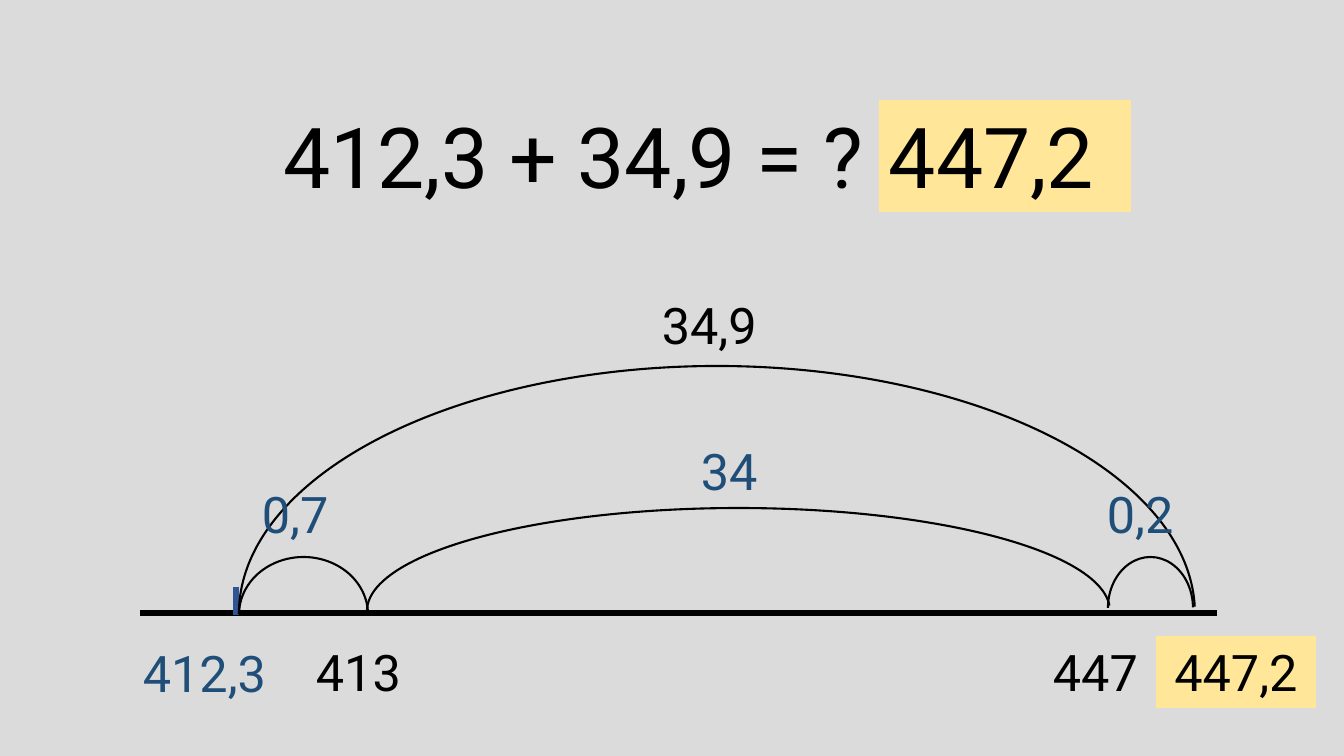
from pptx import Presentation
from pptx.dml.color import RGBColor
from pptx.enum.shapes import MSO_CONNECTOR, MSO_SHAPE
from pptx.enum.text import MSO_ANCHOR, MSO_AUTO_SIZE, PP_ALIGN
from pptx.oxml.ns import qn
from pptx.util import Pt
from lxml import etree

ARC, RECT = MSO_SHAPE.ARC, MSO_SHAPE.RECTANGLE
LEFT, CENTER = PP_ALIGN.LEFT, PP_ALIGN.CENTER
TOP = MSO_ANCHOR.TOP
GROW = MSO_AUTO_SIZE.SHAPE_TO_FIT_TEXT
STRAIGHT = MSO_CONNECTOR.STRAIGHT

# Content: lengths in px
WIDE, HIGH = 1344, 756
FONT = "Roboto"
BACK, BLACK, BLUE, TICK, GOLD = "DBDBDB", "000000", "1F4E79", "2F5597", "FFE699"
BIG, SMALL = 60, 36
LABEL_H = 72

TITLE = ("412,3 + 34,9 = ?", (273, 99, 676, 112))
# text, box, size, alignment
ANSWERS = [
    ("447,2", (879, 100, 252, 112), BIG, LEFT),
    ("447,2", (1156, 636, 160, LABEL_H), SMALL, CENTER),
]
# text, left, top, width, colour
LABELS = [
    ("34,9", 652, 289, 130, BLACK),
    ("34", 691, 435, 101, BLUE),
    ("0,7", 252, 478, 106, BLUE),
    ("0,2", 1097, 478, 114, BLUE),
    ("412,3", 133, 637, 155, BLUE),
    ("413", 306, 636, 111, BLACK),
    ("447", 1043, 636, 114, BLACK),
]
# left, top, width, height of the full ellipse behind each jump
JUMPS = [
    (239, 557, 129, 115),
    (367, 508, 743, 206),
    (1108, 557, 85, 102),
    (239, 366, 956, 495),
]
ARC_ENDS = (108, 215.5)
# x1, y1, x2, y2, colour
LINES = [
    (140, 613, 1217, 613, BLACK),
    (236, 587, 236, 615, TICK),
]


def px(*vals):
    return [round(v * 914400 / 100.8) for v in vals]


def rgb(code):
    return RGBColor.from_string(code)


def write(shape, text, size, color, align=LEFT):
    frame = shape.text_frame
    frame.word_wrap = True
    frame.auto_size = GROW
    frame.vertical_anchor = TOP
    para = frame.paragraphs[0]
    para.alignment = align
    run = para.add_run()
    run.text = text
    run.font.name = FONT
    run.font.size = Pt(size)
    run.font.color.rgb = rgb(color)


def stroke(shape, color, width):
    shape.line.color.rgb = rgb(color)
    shape.line.width = Pt(width)


prs = Presentation()
prs.slide_width, prs.slide_height = px(WIDE, HIGH)
slide = prs.slides.add_slide(prs.slide_layouts[5])
slide.background.fill.solid()
slide.background.fill.fore_color.rgb = rgb(BACK)
shapes = slide.shapes

# Sum
text, box = TITLE
title = shapes.title
title.left, title.top, title.width, title.height = px(*box)
write(title, text, BIG, BLACK)

# Highlighted answers
for text, box, size, align in ANSWERS:
    card = shapes.add_shape(RECT, *px(*box))
    card.shadow.inherit = False
    card.fill.solid()
    card.fill.fore_color.rgb = rgb(GOLD)
    card.line.fill.background()
    write(card, text, size, BLACK, align)

# Number line and start tick
for *ends, color in LINES:
    line = shapes.add_connector(STRAIGHT, *px(*ends))
    stroke(line, color, 4.5)
    etree.SubElement(line.element.spPr, qn("a:effectLst"))

# Jumps
for box in JUMPS:
    arc = shapes.add_shape(ARC, *px(*box))
    arc.adjustments[0], arc.adjustments[1] = ARC_ENDS
    arc.shadow.inherit = False
    arc.fill.background()
    stroke(arc, BLACK, 1.5)

# Labels
for text, left, top, width, color in LABELS:
    label = shapes.add_textbox(*px(left, top, width, LABEL_H))
    write(label, text, SMALL, color)

prs.save("out.pptx")
